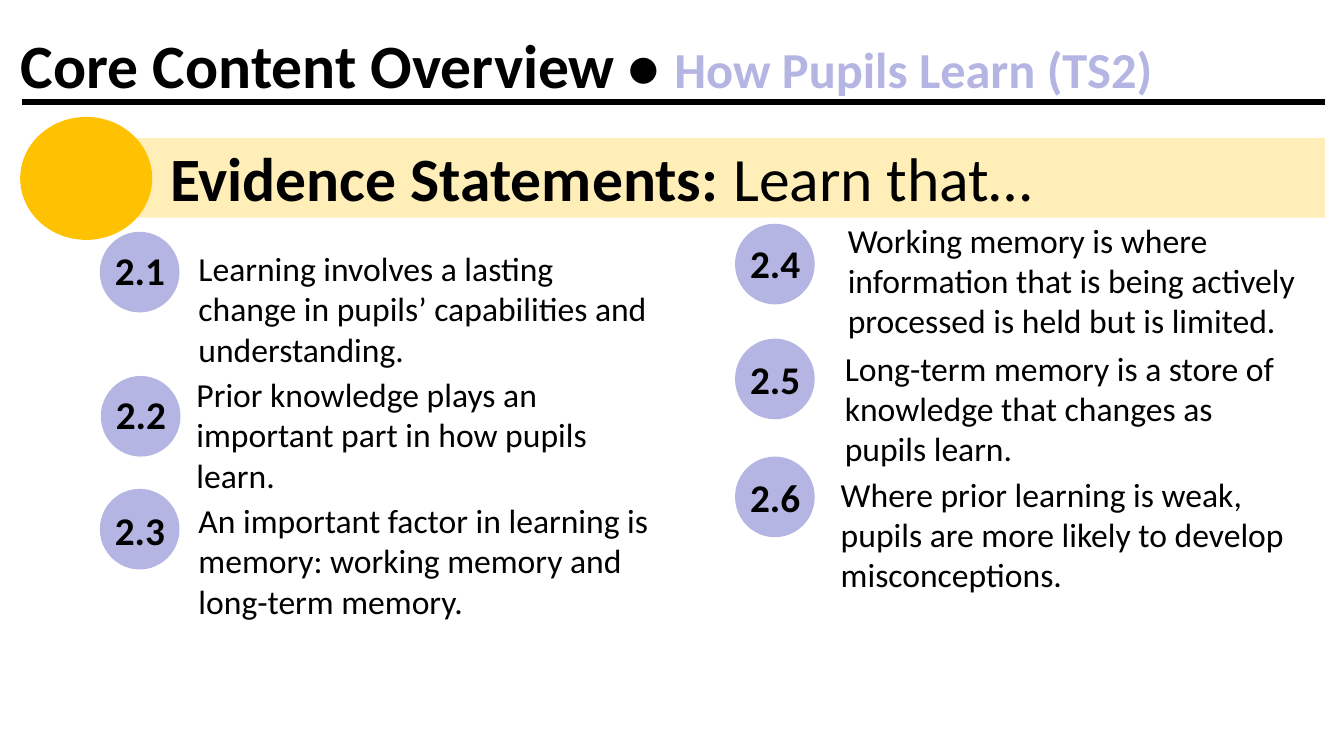
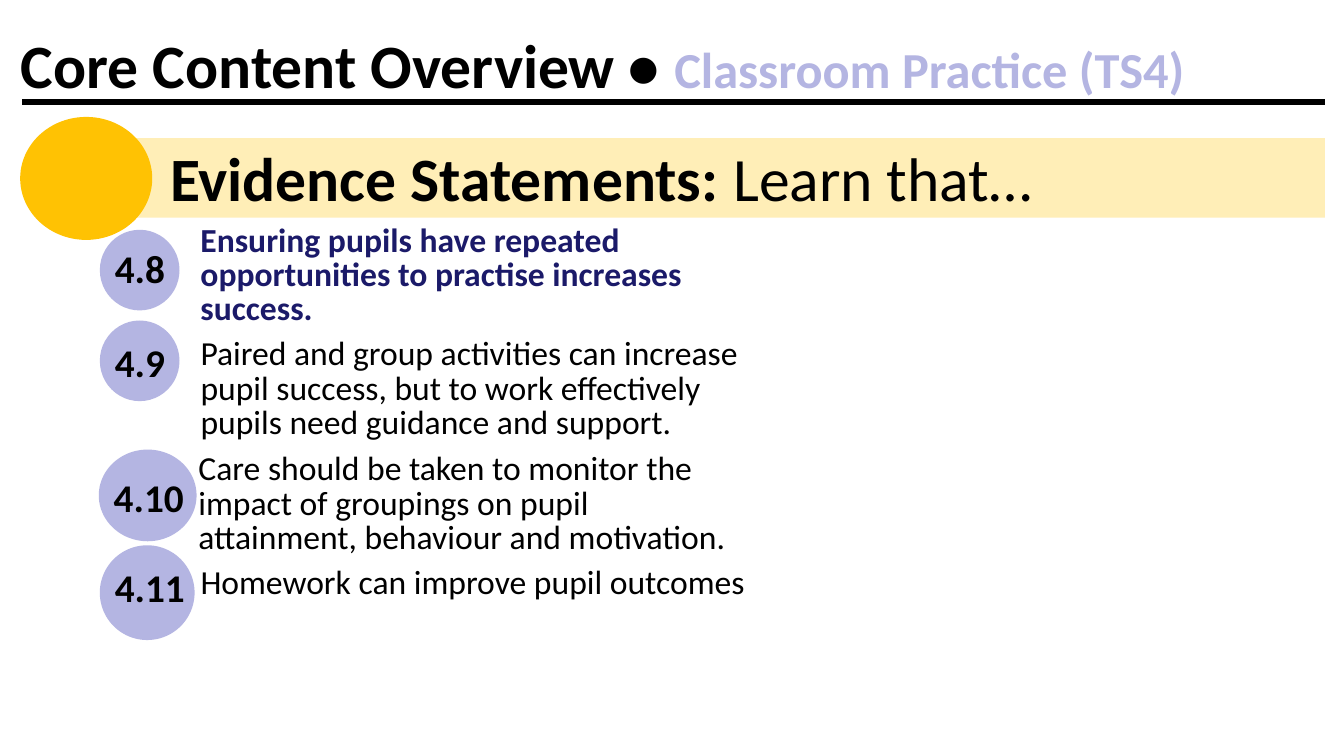
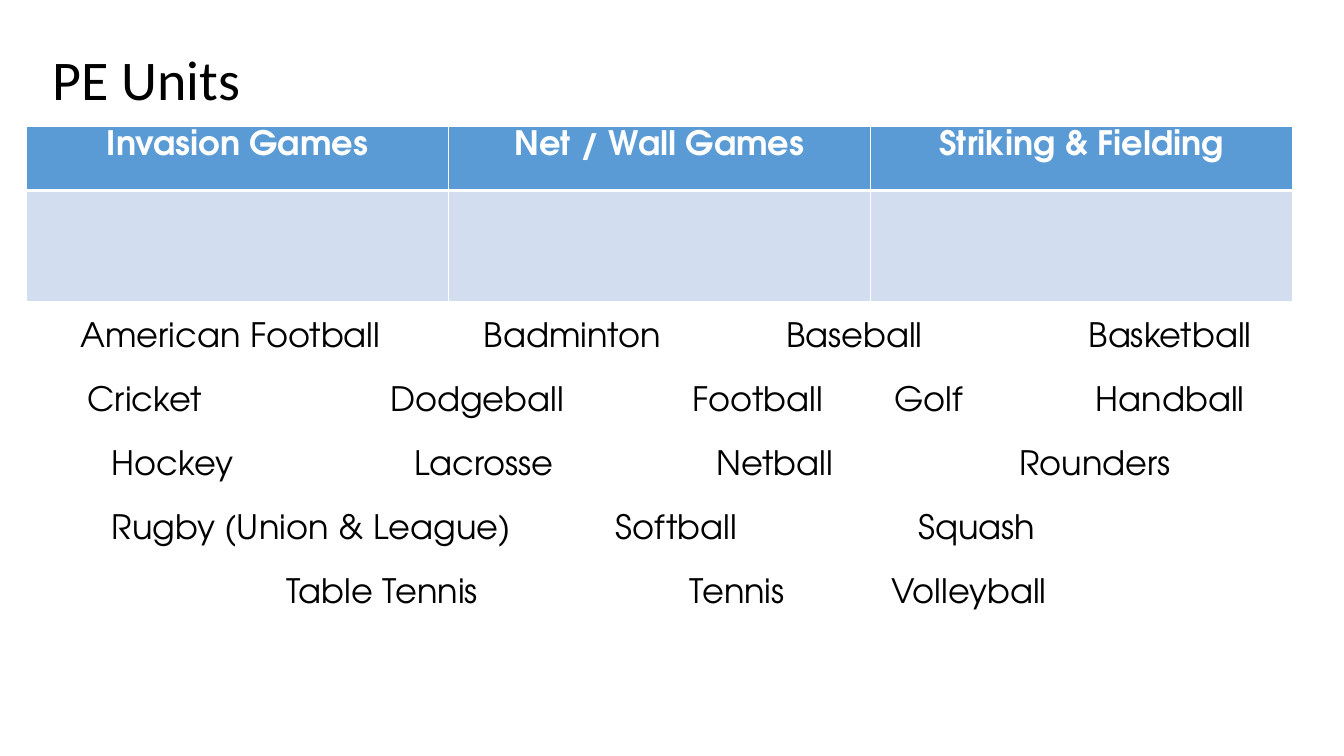
from lxml.etree import SubElement
from pptx import Presentation
from pptx.dml.color import RGBColor
from pptx.enum.shapes import MSO_CONNECTOR, MSO_SHAPE
from pptx.enum.text import MSO_AUTO_SIZE, PP_ALIGN
from pptx.oxml.ns import qn
from pptx.util import Inches, Pt

BLACK, WHITE, NAVY = "000000", "FFFFFF", "1B1A69"
LILAC, GOLD, CREAM = "B4B5E2", "FFC203", "FFEEB7"
HEADER_BLUE, PALE_BLUE = "5B9BD5", "D2DEEF"
BODY_FONT, PE_FONT = "Calibri", "TeX Gyre Adventor"

# number, circle (left, top, width, height), label top, statement (left, top, width, height), wording, highlighted
OVERVIEWS = [
    ("How Pupils Learn (TS2)", 1.0, [
        ("2.1", (0.99, 2.3, 0.79, 0.8), 2.39, (1.87, 2.41, 4.72, 1.31),
         "Learning involves a lasting change in pupils’ capabilities and understanding.", False),
        ("2.2", (1, 3.73, 0.79, 0.8), 3.82, (1.85, 3.66, 4.72, 1.31),
         "Prior knowledge plays an important part in how pupils learn.", False),
        ("2.3", (0.99, 4.85, 0.79, 0.8), 4.97, (1.87, 4.91, 4.72, 1.31),
         "An important factor in learning is memory: working memory and long-term memory.", False),
        ("2.4", (7.29, 2.22, 0.79, 0.8), 2.33, (8.31, 2.13, 4.72, 1.31),
         "Working memory is where information that is being actively processed is held but is limited.", False),
        ("2.5", (7.29, 3.36, 0.79, 0.8), 3.48, (8.28, 3.4, 4.72, 1.31),
         "Long-term memory is a store of knowledge that changes as pupils learn.", False),
        ("2.6", (7.29, 4.53, 0.79, 0.8), 4.65, (8.24, 4.65, 4.72, 1.31),
         "Where prior learning is weak, pupils are more likely to develop misconceptions.", False),
    ]),
    ("Classroom Practice (TS4)", 0.85, [
        ("4.8", (0.99, 2.28, 0.79, 0.8), 2.37, (1.89, 2.18, 5.74, 1.13),
         "Ensuring pupils have repeated opportunities to practise increases success.", True),
        ("4.9", (0.99, 3.18, 0.79, 0.8), 3.31, (1.89, 3.31, 5.75, 1.13),
         "Paired and group activities can increase pupil success, but to work effectively "
         "pupils need guidance and support.", False),
        ("4.10", (0.98, 4.46, 0.97, 0.91), 4.65, (1.87, 4.45, 5.47, 1.13),
         "Care should be taken to monitor the impact of groupings on pupil attainment, "
         "behaviour and motivation.", False),
        ("4.11", (0.99, 5.41, 0.94, 0.94), 5.54, (1.89, 5.58, 5.92, 0.45),
         "Homework can improve pupil outcomes", False),
    ]),
]
UNITS = ["Invasion Games", "Net / Wall Games", "Striking & Fielding"]
SPORTS = [
    (0.18, [("American Football", 0), ("Badminton", 4), ("Baseball", 7), ("Basketball", 10)]),
    (0.25, [("Cricket", 0), ("Dodgeball", 3), ("Football", 6), ("Golf", 8), ("Handball", 10)]),
    (0.49, [("Hockey", 0), ("Lacrosse", 3), ("Netball", 6), ("Rounders", 9)]),
    (0.49, [("Rugby (Union & League)", 0), ("Softball", 5), ("Squash", 8)]),
    (2.22, [("Table Tennis", 0), ("Tennis", 4), ("Volleyball", 6)]),
]


def color(value):
    return RGBColor.from_string(value)


def set_font(font, size, value=BLACK, bold=False, name=BODY_FONT):
    font.name, font.size, font.bold = name, Pt(size), bold
    font.color.rgb = color(value)


def add_filled(shapes, kind, box, fill):
    shape = shapes.add_shape(kind, *map(Inches, box))
    shape.shadow.inherit = False
    shape.fill.solid()
    shape.fill.fore_color.rgb = color(fill)
    shape.line.fill.background()


def add_text(shapes, box, runs, wrap=True):
    frame = shapes.add_textbox(*map(Inches, box)).text_frame
    frame.word_wrap = wrap
    frame.auto_size = MSO_AUTO_SIZE.SHAPE_TO_FIT_TEXT
    paragraph = frame.paragraphs[0]
    for text, size, value, bold in runs:
        run = paragraph.add_run()
        run.text = text
        set_font(run.font, size, value, bold)
    return paragraph


def add_overview_frame(slide, topic):
    shapes = slide.shapes
    add_filled(shapes, MSO_SHAPE.RECTANGLE, (1.26, 1.37, 11.88, 0.79), CREAM)
    add_filled(shapes, MSO_SHAPE.OVAL, (0.2, 1.16, 1.31, 1.22), GOLD)
    add_text(shapes, (1.59, 1.34, 11.53, 0.84),
             [("Evidence Statements: ", 44, BLACK, True), ("Learn that…", 44, BLACK, False)])
    rule = shapes.add_connector(MSO_CONNECTOR.STRAIGHT, Inches(0.22), Inches(1.01),
                                Inches(13.14), Inches(1.01))
    rule.line.color.rgb = color(BLACK)
    rule.line.width = Pt(4.5)
    SubElement(rule._element.spPr, qn("a:effectLst"))
    add_text(shapes, (0.11, 0.22, 13.22, 0.84),
             [("Core Content Overview • ", 44, BLACK, True), (topic, 36, LILAC, True)])


def add_statement(slide, spacing, number, circle, label_top, box, wording, highlighted):
    paragraph = add_text(slide.shapes, box,
                         [(wording, 24, NAVY if highlighted else BLACK, highlighted)])
    paragraph.line_spacing = spacing
    paragraph.space_after = Pt(12)
    badge = slide.shapes.add_group_shape().shapes
    add_filled(badge, MSO_SHAPE.OVAL, circle, LILAC)
    label_width = 0.72 if len(number) == 3 else 0.93
    add_text(badge, (circle[0] + 0.05, label_top, label_width, 0.57),
             [(number, 28, BLACK, True)], wrap=False)


def add_borders(cell, bottom_width):
    properties = cell._tc.get_or_add_tcPr()
    for side, width in (("L", 1), ("R", 1), ("T", 1), ("B", bottom_width)):
        line = SubElement(properties, qn(f"a:ln{side}"), w=str(Pt(width)))
        fill = SubElement(line, qn("a:solidFill"))
        SubElement(fill, qn("a:srgbClr"), val=WHITE)


def add_units_table(slide):
    table = slide.shapes.add_table(2, len(UNITS), Inches(0.26), Inches(1.25),
                                   Inches(12.56), Inches(1.74)).table
    for row, height, fill, bottom_width in zip(table.rows, (0.64, 1.1),
                                               (HEADER_BLUE, PALE_BLUE), (3, 1)):
        row.height = Inches(height)
        for cell in row.cells:
            add_borders(cell, bottom_width)
            cell.fill.solid()
            cell.fill.fore_color.rgb = color(fill)
    for cell, unit in zip(table.rows[0].cells, UNITS):
        cell.text = unit
        paragraph = cell.text_frame.paragraphs[0]
        paragraph.alignment = PP_ALIGN.CENTER
        set_font(paragraph.font, 24, WHITE, True, PE_FONT)


def add_sports(slide):
    frame = slide.shapes.add_textbox(Inches(0.52), Inches(3.07), Inches(12.18), Inches(3.1)).text_frame
    frame.word_wrap = True
    for index, (start, sports) in enumerate(SPORTS):
        paragraph = frame.add_paragraph() if index else frame.paragraphs[0]
        paragraph.text = "".join(f"\t{sport}" for sport, _ in sports)
        stops = SubElement(paragraph._p.get_or_add_pPr(), qn("a:tabLst"))
        for _, distance in sports:
            SubElement(stops, qn("a:tab"), pos=str(Inches(start + distance)), algn="l")
        if index:
            paragraph.space_before = Pt(16.8)
        set_font(paragraph.font, 24, name=PE_FONT)


def main():
    presentation = Presentation()
    presentation.slide_width, presentation.slide_height = Inches(13.33), Inches(7.5)
    blank = presentation.slide_layouts[6]
    for topic, spacing, statements in OVERVIEWS:
        slide = presentation.slides.add_slide(blank)
        add_overview_frame(slide, topic)
        for statement in statements:
            add_statement(slide, spacing, *statement)
    slide = presentation.slides.add_slide(blank)
    add_text(slide.shapes, (0.42, 0.39, 2.08, 0.77), [("PE Units", 40, BLACK, False)], wrap=False)
    add_sports(slide)
    add_units_table(slide)
    presentation.save("out.pptx")


if __name__ == "__main__":
    main()
